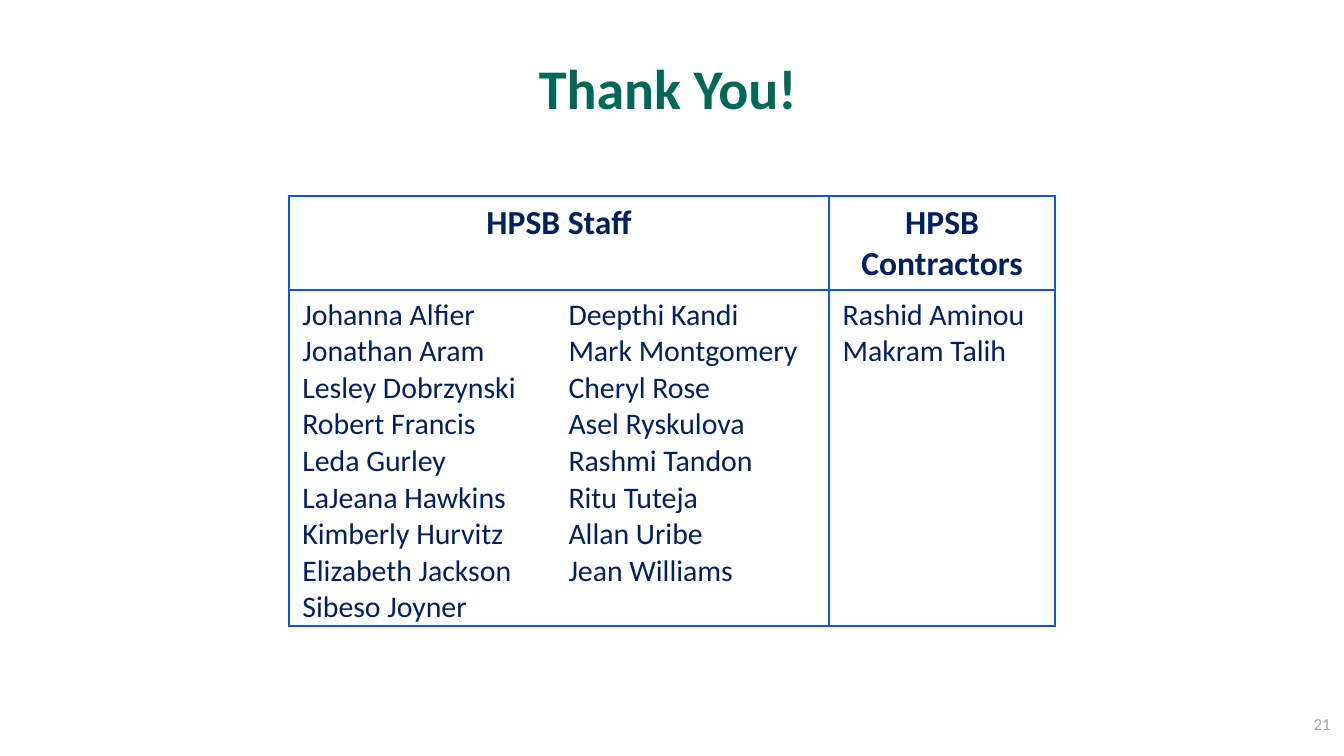
from lxml import etree
from pptx import Presentation
from pptx.dml.color import RGBColor
from pptx.enum.text import MSO_ANCHOR, PP_ALIGN
from pptx.oxml.ns import qn
from pptx.util import Inches, Pt

GREEN = RGBColor(0x00, 0x68, 0x58)
NAVY = RGBColor(0x00, 0x20, 0x60)
BLUE = RGBColor(0x0F, 0x56, 0xDC)
GRAY = RGBColor(0xA6, 0xA6, 0xA6)

HEADERS = {0: "HPSB Staff", 2: "HPSB Contractors"}
NAMES = [
    ["Johanna Alfier", "Jonathan Aram", "Lesley Dobrzynski", "Robert Francis",
     "Leda Gurley", "LaJeana Hawkins", "Kimberly Hurvitz", "Elizabeth Jackson",
     "Sibeso Joyner"],
    ["Deepthi Kandi", "Mark Montgomery", "Cheryl Rose", "Asel Ryskulova",
     "Rashmi Tandon", "Ritu Tuteja", "Allan Uribe", "Jean Williams"],
    ["Rashid Aminou", "Makram Talih"],
]


def write(tf, lines, size, color, bold=False, align=PP_ALIGN.LEFT):
    """Fill a text frame with one paragraph per line."""
    for i, line in enumerate(lines):
        p = tf.paragraphs[0] if i == 0 else tf.add_paragraph()
        p.alignment = align
        r = p.add_run()
        r.text = line
        r.font.name = "Calibri"
        r.font.size = Pt(size)
        r.font.bold = bold
        r.font.color.rgb = color


def set_borders(cell, sides):
    """Draw 1 pt blue lines on the named sides (L, R, T, B) and none elsewhere."""
    tc_pr = cell._tc.get_or_add_tcPr()
    for i, side in enumerate("LRTB"):
        ln = etree.Element(qn(f"a:ln{side}"), w=str(Pt(1)))
        if side in sides:
            fill = etree.SubElement(ln, qn("a:solidFill"))
            etree.SubElement(fill, qn("a:srgbClr"), val=str(BLUE))
        else:
            etree.SubElement(ln, qn("a:noFill"))
        tc_pr.insert(i, ln)


prs = Presentation()
prs.slide_width = Inches(10)
prs.slide_height = Inches(10 * 9 / 16)
s = prs.slides.add_slide(prs.slide_layouts[5])

title = s.shapes.title
title.left, title.top = Inches(0.47), Inches(0.34)
title.width, title.height = Inches(9), Inches(0.61)
title.text_frame.vertical_anchor = MSO_ANCHOR.MIDDLE
write(title.text_frame, ["Thank You!"], 30, GREEN, bold=True, align=PP_ALIGN.CENTER)

table = s.shapes.add_table(2, 3, Inches(2.15), Inches(1.46), Inches(5.7), Inches(3.2)).table
table.first_row = table.horz_banding = False
for column, width in zip(table.columns, (1.98, 2.04, 1.68)):
    column.width = Inches(width)
for row, height in zip(table.rows, (0.7, 2.5)):
    row.height = Inches(height)
for cell in table.iter_cells():
    cell.fill.background()
    cell.margin_bottom = 0

table.cell(0, 0).merge(table.cell(0, 1))
for col, header in HEADERS.items():
    write(table.cell(0, col).text_frame, [header], 18, NAVY, bold=True, align=PP_ALIGN.CENTER)
for col, names in enumerate(NAMES):
    write(table.cell(1, col).text_frame, names, 16, NAVY)

# The two staff columns share one frame, so no line runs between them.
for row in range(2):
    for col, sides in enumerate(("LTB", "RTB", "LRTB")):
        cell = table.cell(row, col)
        set_borders(cell, "LRTB" if cell.is_merge_origin else sides)

number = s.shapes.add_textbox(Inches(9.47), Inches(5.26), Inches(0.53), Inches(0.28))
number.text_frame.word_wrap = True
write(number.text_frame, ["21"], 9, GRAY, align=PP_ALIGN.RIGHT)

prs.save("out.pptx")
